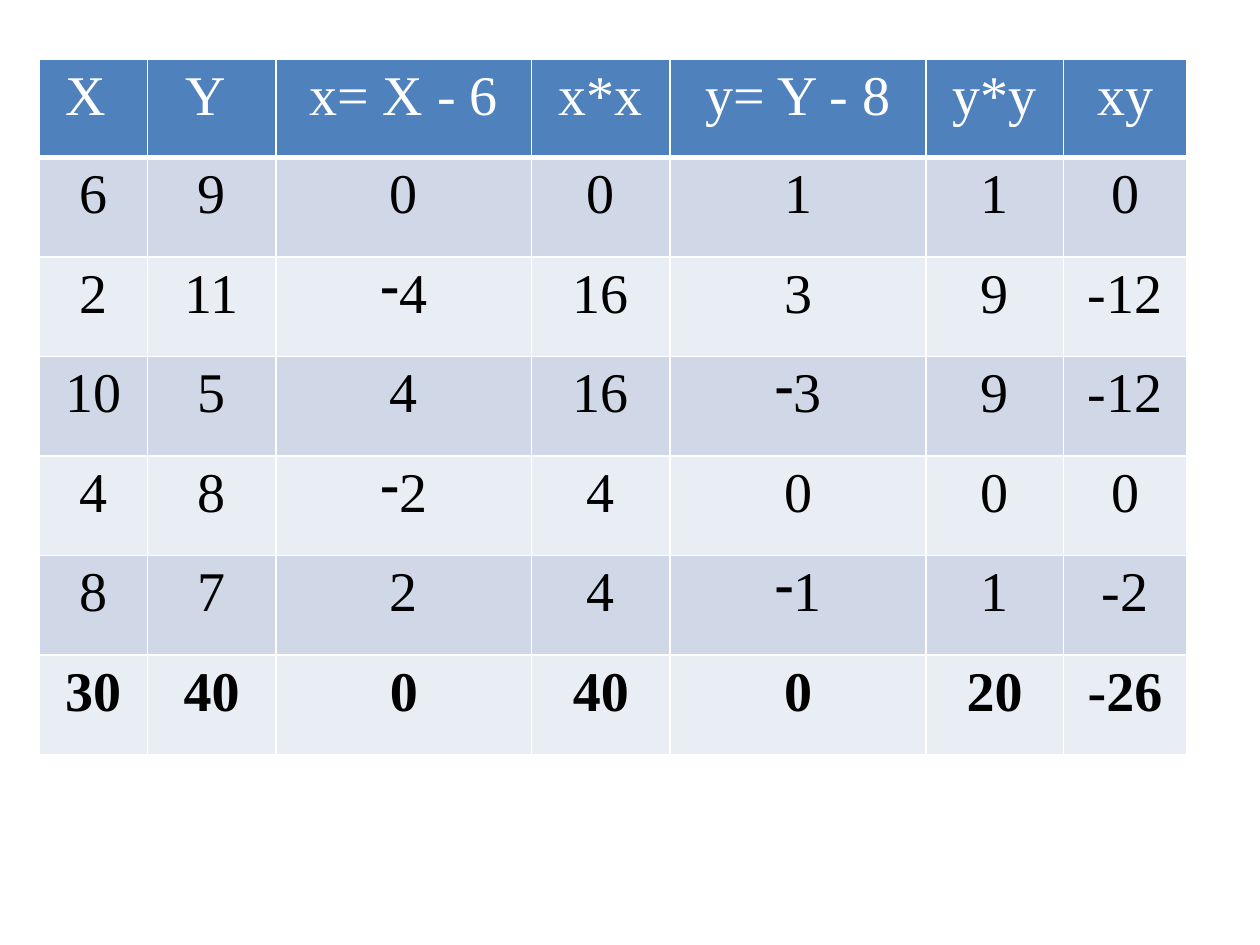
import dataclasses

import lxml.etree
import pptx
import pptx.dml.color
import pptx.enum.text
import pptx.oxml.ns
import pptx.util


@dataclasses.dataclass(frozen=True)
class Theme:
    font: str = "Times New Roman"
    size: int = 32
    header_fill: str = "4F81BD"
    band_fills: tuple = ("D0D8E8", "E9EDF4")
    light: str = "FFFFFF"
    dark: str = "000000"
    line: float = 1
    header_line: float = 3


THEME = Theme()
BULLET = "• "
COLUMN_WIDTHS = (0.86, 1.02, 2.03, 1.1, 2.03, 1.09, 0.98)
ROW_HEIGHTS = (0.78,) + (0.79,) * 6
DASH = "dash:"
ROWS = (
    ("X ", "Y ", "x= X - 6", "x*x", "y= Y - 8", "y*y", "xy"),
    ("6", "9", "0", "0", "1", "1", "0"),
    ("2", "11", DASH + "4", "16", "3", "9", "-12"),
    ("10", "5", "4", "16", DASH + "3", "9", "-12"),
    ("4", "8", DASH + "2", "4", "0", "0", "0"),
    ("8", "7", "2", "4", DASH + "1", "1", "-2"),
    ("30", "40", "0", "40", "0", "20", "-26"),
)


def rgb(value):
    return pptx.dml.color.RGBColor.from_string(value)


def add_element(parent, tag, **attributes):
    return lxml.etree.SubElement(parent, pptx.oxml.ns.qn(tag), attributes)


def set_borders(cell, bottom):
    properties = cell._tc.get_or_add_tcPr()
    widths = {"a:lnL": THEME.line, "a:lnR": THEME.line, "a:lnT": THEME.line, "a:lnB": bottom}
    for position, (tag, width) in enumerate(widths.items()):
        line = add_element(properties, tag, w=str(pptx.util.Pt(width)))
        add_element(add_element(line, "a:solidFill"), "a:srgbClr", val=THEME.light)
        properties.insert(position, line)


def add_dash_bullet(para):
    properties = para._p.get_or_add_pPr()
    properties.set("marL", "0")
    properties.set("indent", "0")
    add_element(properties, "a:buFontTx")
    add_element(properties, "a:buChar", char="-")


def write_text(cell, text, color, bold=False):
    para = cell.text_frame.paragraphs[0]
    para.alignment = pptx.enum.text.PP_ALIGN.CENTER
    if text.startswith(DASH):
        add_dash_bullet(para)
    span = para.add_run()
    span.text = text.removeprefix(DASH)
    span.font.name = THEME.font
    span.font.size = pptx.util.Pt(THEME.size)
    span.font.bold = bold
    span.font.color.rgb = rgb(color)


def format_cell(cell, fill, bottom):
    cell.fill.solid()
    cell.fill.fore_color.rgb = rgb(fill)
    set_borders(cell, bottom)


def add_deviation_table(page, left, top):
    table = page.shapes.add_table(
        len(ROWS), len(COLUMN_WIDTHS),
        pptx.util.Inches(left), pptx.util.Inches(top),
        pptx.util.Inches(sum(COLUMN_WIDTHS)), pptx.util.Inches(sum(ROW_HEIGHTS)),
    ).table
    for column, width in zip(table.columns, COLUMN_WIDTHS):
        column.width = pptx.util.Inches(width)
    for index, (row, height, texts) in enumerate(zip(table.rows, ROW_HEIGHTS, ROWS)):
        row.height = pptx.util.Inches(height)
        header = index == 0
        fill = THEME.header_fill if header else THEME.band_fills[(index - 1) % 2]
        color = THEME.light if header else THEME.dark
        bottom = THEME.header_line if header else THEME.line
        for cell, text in zip(row.cells, texts):
            format_cell(cell, fill, bottom)
            write_text(cell, text, color, bold=index == len(ROWS) - 1)


def main():
    deck = pptx.Presentation()
    deck.slide_width = pptx.util.Inches(10)
    deck.slide_height = pptx.util.Inches(7.5)
    page = deck.slides.add_slide(deck.slide_layouts[6])
    add_deviation_table(page, left=0.31, top=0.47)
    deck.save("out.pptx")


if __name__ == "__main__":
    main()
